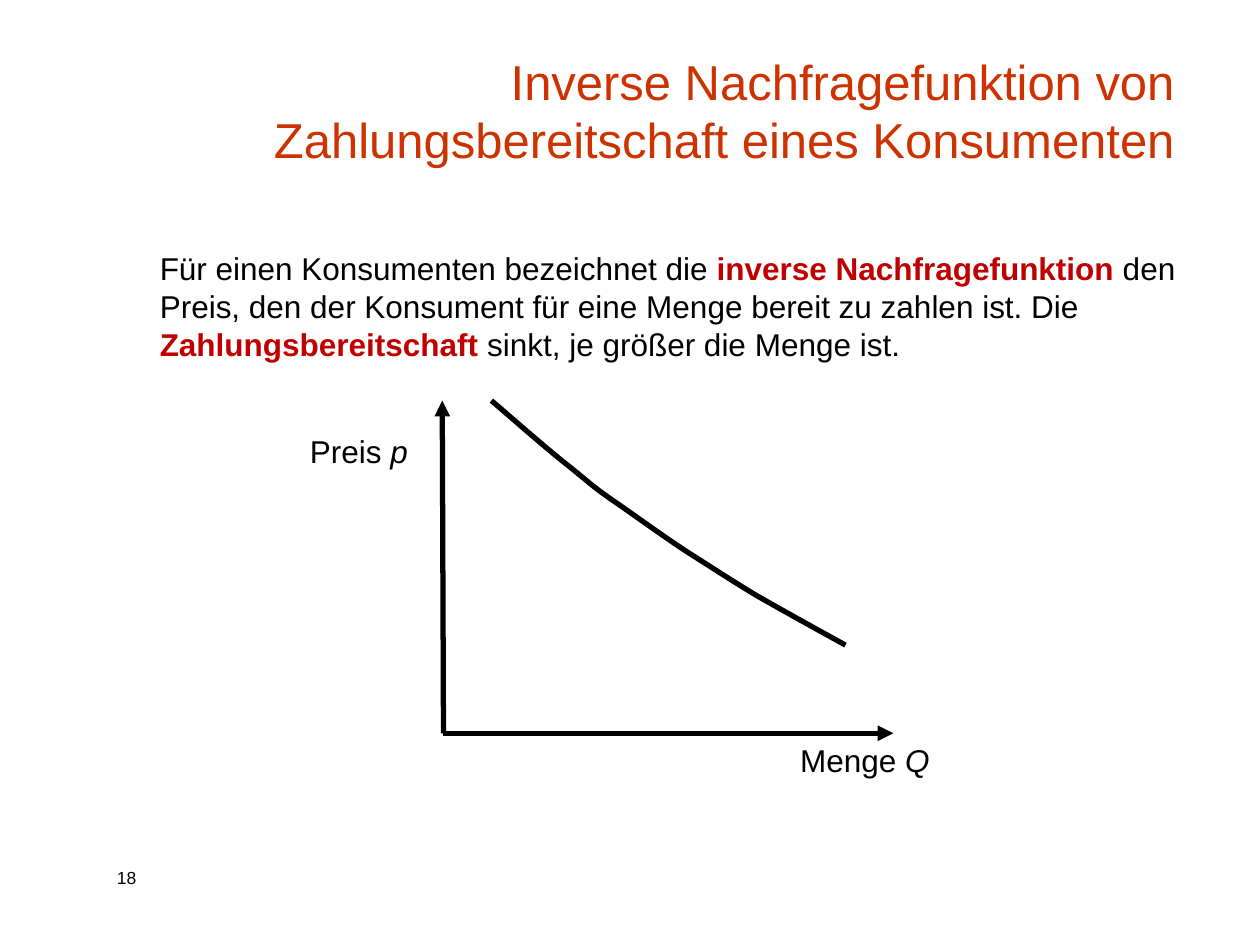
"""Build the slide on the inverse demand function of a consumer."""
from lxml import etree
from pptx import Presentation
from pptx.dml.color import RGBColor
from pptx.enum.shapes import MSO_CONNECTOR
from pptx.enum.text import MSO_ANCHOR, PP_ALIGN
from pptx.oxml.ns import qn
from pptx.util import Inches, Pt

STRAIGHT = MSO_CONNECTOR.STRAIGHT
BOTTOM = MSO_ANCHOR.BOTTOM
RIGHT = PP_ALIGN.RIGHT
BLACK = RGBColor(0x00, 0x00, 0x00)
ORANGE = RGBColor(0xCC, 0x33, 0x00)
RED = RGBColor(0xC0, 0x00, 0x00)
FONT = "Arial"
WIDTH = Pt(3)
STEPS = 12

TITLE = "Inverse Nachfragefunktion von Zahlungsbereitschaft eines Konsumenten"
BODY = [
    ("Für einen Konsumenten bezeichnet die ", ""),
    ("inverse Nachfragefunktion ", "key"),
    ("den Preis, den der Konsument für eine Menge bereit zu zahlen ist. Die ", ""),
    ("Zahlungsbereitschaft", "key"),
    (" sinkt, je größer die Menge ist.", ""),
]
TEXTS = [
    ((1.17, 1.93, 8.53, 1.01), BODY, 18, (0.1, 0.05)),
    ((2.46, 3.43, 1.3, 0.3), [("Preis", ""), (" p", "var")], 18, (0, 0)),
    ((6.35, 5.88, 1.11, 0.35), [("Menge", ""), (" Q", "var")], 18, (0, 0)),
    ((0.83, 6.83, 0.67, 0.27), [("18", "")], 10, (0.1, 0.05)),
]
ORIGIN = (3.52, 5.82)
AXES = [(7.09, 5.82), (3.51, 3.18)]
START = (6.71, 5.12)
CURVE = [
    ((6.6, 5.06), (6.22, 4.85), (6.01, 4.73)),
    ((5.81, 4.61), (5.69, 4.53), (5.5, 4.41)),
    ((5.31, 4.29), (5.05, 4.1), (4.89, 3.99)),
    ((4.73, 3.88), (4.71, 3.86), (4.54, 3.72)),
    ((4.37, 3.59), (4.03, 3.29), (3.9, 3.18)),
]


def style(font, size, color):
    font.name, font.size, font.color.rgb = FONT, Pt(size), color


def add_text(shapes, box, runs, size, inset):
    frame = shapes.add_textbox(*map(Inches, box)).text_frame
    frame.word_wrap = True
    frame.margin_left = frame.margin_right = Inches(inset[0])
    frame.margin_top = frame.margin_bottom = Inches(inset[1])
    para = frame.paragraphs[0]
    style(para.font, size, BLACK)
    for text, kind in runs:
        run = para.add_run()
        run.text = text
        if kind == "key":
            run.font.bold = True
            run.font.color.rgb = RED
        elif kind == "var":
            run.font.italic = True


def add_axis(shapes, end):
    axis = shapes.add_connector(STRAIGHT, *map(Inches, ORIGIN + end))
    axis.line.color.rgb = BLACK
    axis.line.width = WIDTH
    line = axis.line._get_or_add_ln()
    etree.SubElement(line, qn("a:tailEnd"), type="triangle")
    etree.SubElement(axis._element.spPr, qn("a:effectLst"))


def bezier(ends, t):
    u = 1 - t
    parts = (u ** 3, 3 * u * u * t, 3 * u * t * t, t ** 3)
    return tuple(
        Inches(sum(part * spot[i] for part, spot in zip(parts, ends)))
        for i in (0, 1)
    )


def add_curve(shapes):
    points, last = [], START
    for bend in CURVE:
        points += [bezier((last, *bend), n / STEPS) for n in range(1, STEPS + 1)]
        last = bend[-1]
    pen = shapes.build_freeform(*map(Inches, START))
    pen.add_line_segments(points, close=False)
    curve = pen.convert_to_shape()
    curve.shadow.inherit = False
    curve.fill.background()
    curve.line.color.rgb = BLACK
    curve.line.width = WIDTH


def main():
    deck = Presentation()
    deck.slide_width, deck.slide_height = Inches(10), Inches(7.5)
    shapes = deck.slides.add_slide(deck.slide_layouts[5]).shapes
    title = shapes.title
    title.left, title.top = Inches(1.87), Inches(0.42)
    title.width, title.height = Inches(7.55), Inches(0.97)
    frame = title.text_frame
    frame.text = TITLE
    frame.vertical_anchor = BOTTOM
    para = frame.paragraphs[0]
    para.alignment = RIGHT
    style(para.font, 28, ORANGE)
    for end in AXES:
        add_axis(shapes, end)
    add_curve(shapes)
    for item in TEXTS:
        add_text(shapes, *item)
    deck.save("out.pptx")


if __name__ == "__main__":
    main()
